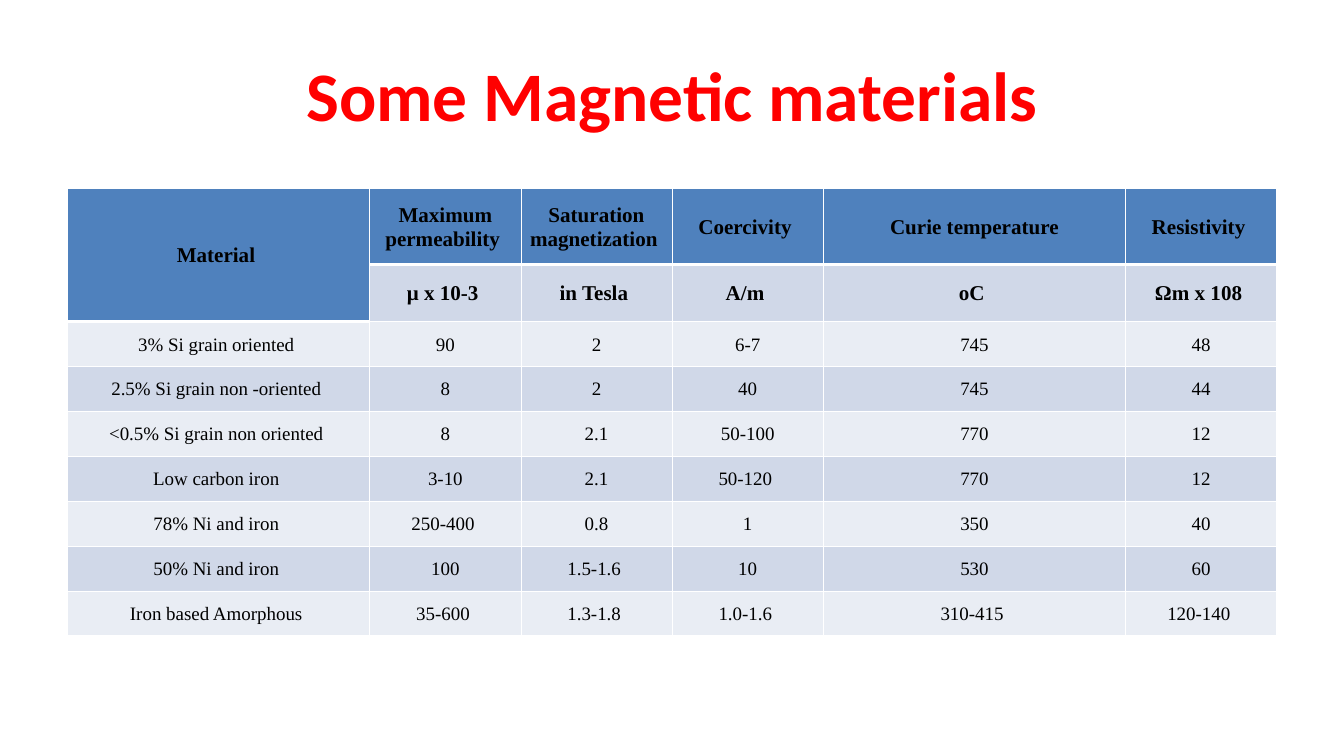
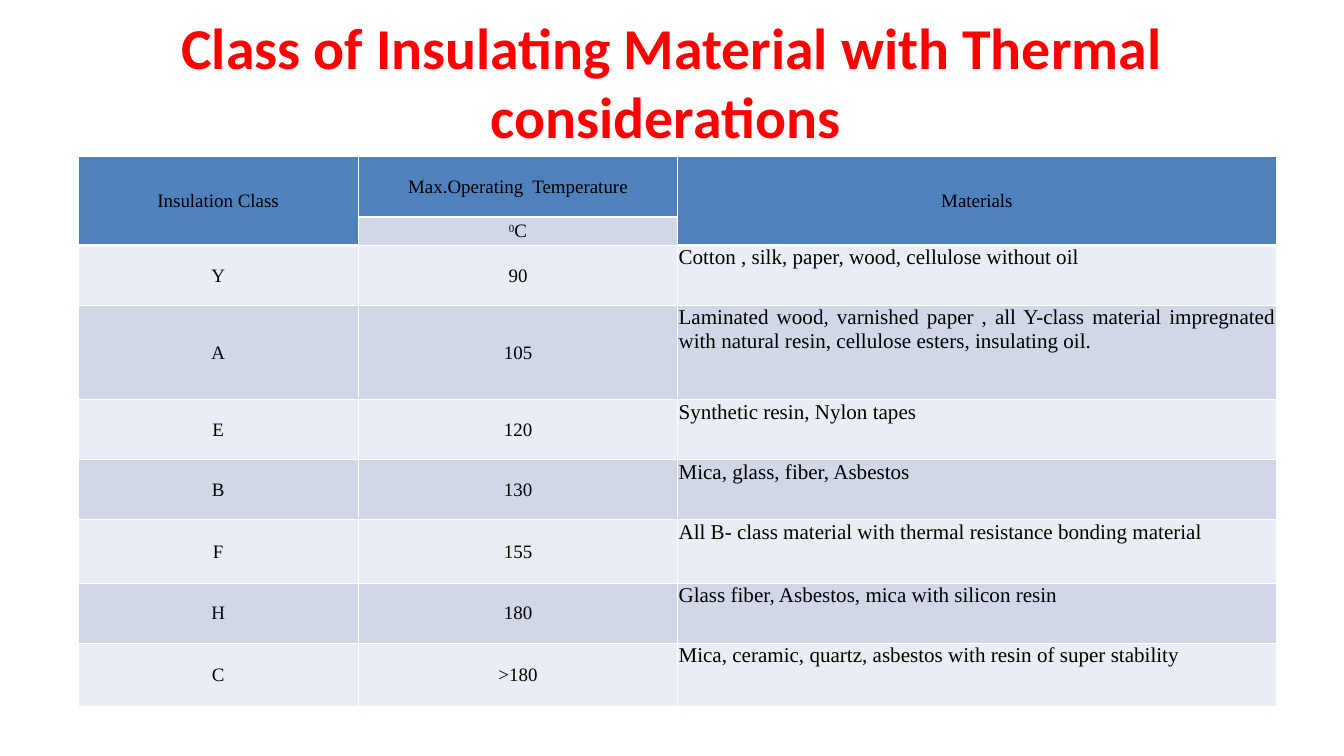
from pptx import Presentation
from pptx.dml.color import RGBColor
from pptx.enum.text import MSO_ANCHOR, PP_ALIGN
from pptx.oxml.ns import qn
from pptx.util import Inches, Pt
from lxml.etree import SubElement

RED = RGBColor(0xFF, 0x00, 0x00)
BLACK = RGBColor(0x00, 0x00, 0x00)
WHITE = RGBColor(0xFF, 0xFF, 0xFF)
BLUE = RGBColor(0x4F, 0x81, 0xBD)
BANDS = (RGBColor(0xE9, 0xED, 0xF4), RGBColor(0xD0, 0xD8, 0xE8))
THIN, THICK = Pt(1), Pt(3)

METALS = [
    ["Material ", "Maximum permeability ", "Saturation magnetization ",
     "Coercivity ", "Curie temperature", "Resistivity "],
    [None, "μ x 10-3 ", "in Tesla ", "A/m ", "oC ", "Ωm x 108 "],
    ["3% Si grain oriented ", "90", "2", "6-7", "745", "48"],
    ["2.5% Si grain non -oriented ", "8", "2", "40", "745", "44"],
    ["<0.5% Si grain non oriented ", "8", "2.1", "50-100", "770", "12"],
    ["Low carbon iron ", "3-10", "2.1", "50-120 ", "770", "12"],
    ["78% Ni and iron ", "250-400 ", "0.8", "1", "350", "40"],
    ["50% Ni and iron ", "100", "1.5-1.6 ", "10", "530", "60"],
    ["Iron based Amorphous ", "35-600 ", "1.3-1.8 ", "1.0-1.6 ",
     "310-415 ", "120-140 "],
]

CLASSES = [
    ["Insulation Class", "Max.Operating  Temperature", "Materials"],
    [None, "", None],
    ["Y", "90", "Cotton , silk, paper, wood, cellulose without oil"],
    ["A", "105", "Laminated wood, varnished paper , all Y-class material "
     "impregnated with natural resin, cellulose esters, insulating oil."],
    ["E", "120", "Synthetic resin, Nylon tapes"],
    ["B", "130", "Mica, glass, fiber, Asbestos"],
    ["F", "155", "All B- class material with thermal resistance bonding "
     "material"],
    ["H", "180", "Glass fiber, Asbestos, mica with silicon resin"],
    ["C", ">180", "Mica, ceramic, quartz, asbestos with resin of super "
     "stability"],
]


def share(total, parts):
    """Split a length in inches in proportion to the parts."""
    return [Inches(total * part / sum(parts)) for part in parts]


class Deck:
    def __init__(self):
        self.prs = Presentation()
        self.prs.slide_width = Pt(1277)
        self.prs.slide_height = Pt(718)
        self.slide = None

    def start(self):
        """Add a blank slide and make it the current one."""
        self.slide = self.prs.slides.add_slide(self.prs.slide_layouts[6])

    def style(self, para, size, bold, color=BLACK, face="Times New Roman",
              align=PP_ALIGN.CENTER):
        para.alignment = align
        font = para.font
        font.size, font.bold, font.name = Pt(size), bold, face
        font.color.rgb = color

    def title(self, text, top, size):
        box = self.slide.shapes.add_textbox(
            Inches(0.89), Inches(top), Inches(15.96), Inches(1.66))
        frame = box.text_frame
        frame.word_wrap = True
        frame.vertical_anchor = MSO_ANCHOR.MIDDLE
        frame.margin_left = frame.margin_right = Inches(0.16)
        frame.margin_top = frame.margin_bottom = Inches(0.08)
        frame.text = text
        self.style(frame.paragraphs[0], size, True, RED, "Calibri")

    def edges(self, cell, top, bottom):
        """Draw white cell borders; only top and bottom vary in width."""
        props = cell._tc.get_or_add_tcPr()
        for side, width in zip("LRTB", (THIN, THIN, top, bottom)):
            line = SubElement(props, qn(f"a:ln{side}"), w=str(int(width)))
            fill = SubElement(line, qn("a:solidFill"))
            SubElement(fill, qn("a:srgbClr"), val=str(WHITE))

    def cell(self, cell, text, row, head):
        """Fill one cell; head is the number of heading rows in its column."""
        cell.text = text or ""
        cell.vertical_anchor = MSO_ANCHOR.MIDDLE
        cell.margin_left = cell.margin_right = Inches(0.01)
        cell.margin_top, cell.margin_bottom = Inches(0.01), 0
        self.edges(cell, THICK if row == head else THIN,
                   THICK if row < head else THIN)
        cell.fill.solid()
        cell.fill.fore_color.rgb = BLUE if row < head else BANDS[row % 2]

    def table(self, place, cols, rows, data, look):
        """Add a table; None in the second row merges with the cell above.

        cols and rows are proportions of the width and height in place.
        look(row, col) gives the text size, bold and alignment of a cell.
        """
        left, top, width, height = place
        grid = self.slide.shapes.add_table(
            len(rows), len(cols), Inches(left), Inches(top),
            Inches(width), Inches(height)).table
        grid.first_row = grid.horz_banding = False
        for col, size in zip(grid.columns, share(width, cols)):
            col.width = size
        for row, size in zip(grid.rows, share(height, rows)):
            row.height = size
        heads = [2 if text is None else 1 for text in data[1]]
        for r, line in enumerate(data):
            for c, text in enumerate(line):
                cell = grid.cell(r, c)
                self.cell(cell, text, r, heads[c])
                size, bold, align = look(r, c)
                self.style(cell.text_frame.paragraphs[0], size, bold,
                           align=align)
                if align == PP_ALIGN.JUSTIFY:
                    cell.vertical_anchor = MSO_ANCHOR.TOP
        for c, head in enumerate(heads):
            if head == 2:
                grid.cell(0, c).merge(grid.cell(1, c))
        return grid


def metal(row, col):
    return (20, True, PP_ALIGN.CENTER) if row < 2 else (
        18, False, PP_ALIGN.CENTER)


def rating(row, col):
    return (20, False, PP_ALIGN.JUSTIFY) if row > 1 and col == 2 else (
        18, False, PP_ALIGN.CENTER)


def main():
    deck = Deck()

    deck.start()
    deck.title("Some Magnetic materials", 0.4, 66)
    deck.table((0.89, 2.49, 15.96, 5.9), [2, 1, 1, 1, 2, 1],
               [1, 0.75] + [0.59] * 7, METALS, metal)

    deck.start()
    deck.title("Class of Insulating Material with Thermal considerations ",
               0.24, 54.9)
    grid = deck.table((1.03, 2.07, 15.81, 7.25), [3.7, 4.22, 7.9],
                      [0.79, 0.37, 0.79, 1.24, 0.79, 0.79, 0.83, 0.79, 0.83],
                      CLASSES, rating)
    para = grid.cell(1, 1).text_frame.paragraphs[0]
    degree, scale = para.add_run(), para.add_run()
    degree.text, scale.text = "0", "C"
    degree._r.get_or_add_rPr().set("baseline", "30000")

    deck.prs.save("out.pptx")


if __name__ == "__main__":
    main()
